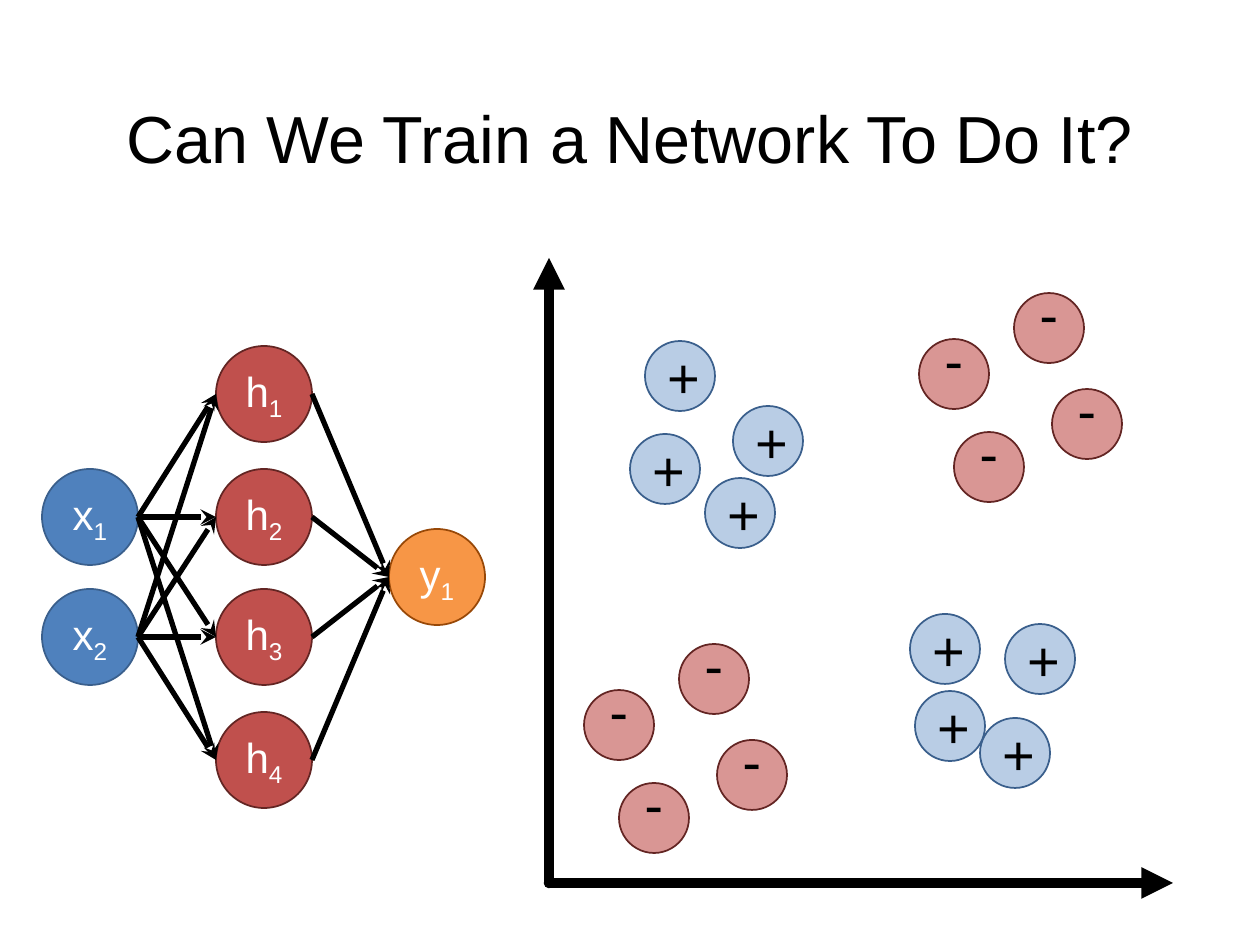
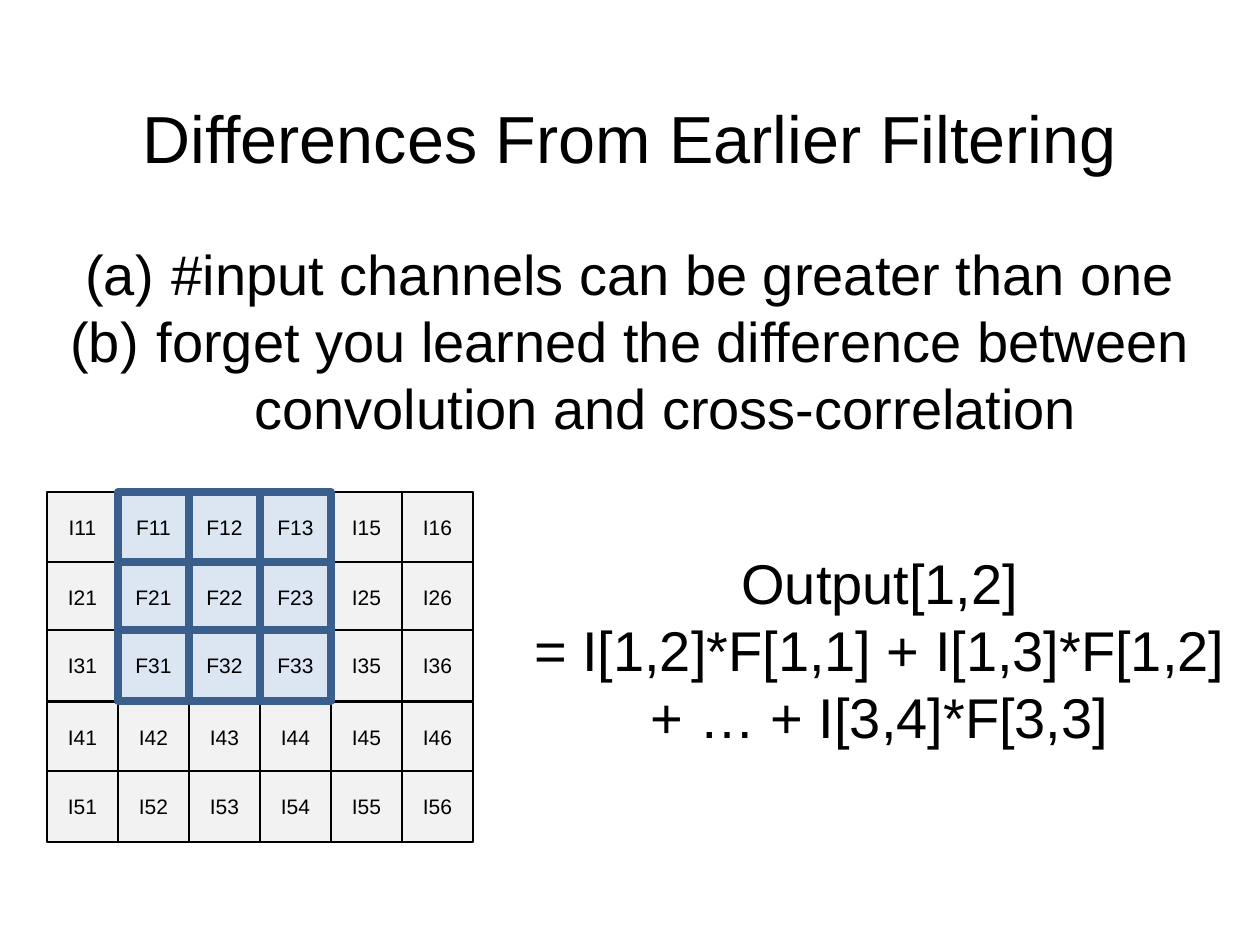
from pptx import Presentation
from pptx.dml.color import RGBColor
from pptx.enum.shapes import MSO_CONNECTOR, MSO_SHAPE
from pptx.enum.text import MSO_ANCHOR, PP_ALIGN
from pptx.oxml.ns import qn
from pptx.util import Emu, Pt
from lxml import etree

PX = 914400 / 126
OVAL, RECTANGLE = MSO_SHAPE.OVAL, MSO_SHAPE.RECTANGLE
STRAIGHT = MSO_CONNECTOR.STRAIGHT
CENTER = PP_ALIGN.CENTER
MIDDLE, TOP = MSO_ANCHOR.MIDDLE, MSO_ANCHOR.TOP
color = RGBColor.from_string

FONT = "Arial"
BLACK, WHITE = "000000", "FFFFFF"
BLUE, RED, ORANGE = "4F81BD", "C0504D", "F79646"
PALE_BLUE, PALE_RED = "B9CDE5", "D99694"
CELL_GRAY, FILTER_BLUE = "F2F2F2", "DCE6F2"
BLUE_EDGE, RED_EDGE, ORANGE_EDGE = "3A5F8C", "632523", "984807"
TITLE_BOX = (87, 50, 1086, 183)
TITLE_STYLE = dict(size=38, line_spacing=0.9)


def add_text(slide, text, box, kind=None, fill=None, edge=None, edge_width=1,
             size=32, font_color=BLACK, subscript="", anchor=MIDDLE,
             line_spacing=None, numbered=False):
    """Add a text box, or a filled shape when kind is given."""
    place = [Emu(round(value * PX)) for value in box]
    if kind is None:
        shape = slide.shapes.add_textbox(*place)
    else:
        shape = slide.shapes.add_shape(kind, *place)
        shape.shadow.inherit = False
        shape.fill.solid()
        shape.fill.fore_color.rgb = color(fill)
        shape.line.color.rgb = color(edge)
        shape.line.width = Pt(edge_width)
    frame = shape.text_frame
    frame.word_wrap = True
    frame.vertical_anchor = anchor
    frame.text = text
    if subscript:
        run = frame.paragraphs[0].add_run()
        run.text = subscript
        run._r.get_or_add_rPr().set("baseline", "-25000")
    for paragraph in frame.paragraphs:
        paragraph.alignment = CENTER
        if line_spacing:
            paragraph.line_spacing = line_spacing
        if numbered:
            properties = paragraph._p.get_or_add_pPr()
            properties.set("marL", "514350")
            properties.set("indent", "-514350")
            number = etree.SubElement(properties, qn("a:buAutoNum"))
            number.set("type", "alphaLcParenBoth")
        for run in paragraph.runs:
            run.font.name = FONT
            run.font.size = Pt(size)
            run.font.color.rgb = color(font_color)
    return shape


def add_arrow(slide, start, end, width, head, cap="flat"):
    points = [Emu(round(value * PX)) for value in (*start, *end)]
    arrow = slide.shapes.add_connector(STRAIGHT, *points)
    arrow.line.color.rgb = color(BLACK)
    arrow.line.width = Pt(width)
    line = arrow.line._get_or_add_ln()
    line.set("cap", cap)
    etree.SubElement(line, qn("a:tailEnd")).set("type", head)
    etree.SubElement(arrow._element.spPr, qn("a:effectLst"))


presentation = Presentation()
presentation.slide_width = Emu(round(1260 * PX))
presentation.slide_height = Emu(round(945 * PX))
blank = presentation.slide_layouts[6]

# Slide 1: network and the points it should separate
slide = presentation.slides.add_slide(blank)
add_text(slide, "Can We Train a Network To Do It?", TITLE_BOX, **TITLE_STYLE)

# Network nodes, layer by layer
NODE = 96
layers = [
    ("x", 42, (469, 589), BLUE, BLUE_EDGE),
    ("h", 216, (346, 469, 589, 712), RED, RED_EDGE),
    ("y", 389, (529,), ORANGE, ORANGE_EDGE),
]
for letter, left, tops, fill, edge in layers:
    for number, top in enumerate(tops, 1):
        add_text(slide, letter, (left, top, NODE, NODE), kind=OVAL, fill=fill,
                 edge=edge, size=24, font_color=WHITE, subscript=str(number))

# Every node feeds every node of the next layer
for (_, left, tops, *_), (_, next_left, next_tops, *_) in zip(layers, layers[1:]):
    for top in tops:
        for next_top in next_tops:
            add_arrow(slide, (left + NODE, top + NODE // 2),
                      (next_left, next_top + NODE // 2), 3, "stealth")

# Axes
origin = (549, 883)
for axis_end in [(549, 258), (1173, 883)]:
    add_arrow(slide, origin, axis_end, 6, "triangle", cap="rnd")

# Positive and negative points
POINT = 70
positives = [(645, 341), (630, 434), (733, 406), (705, 478),
             (910, 614), (915, 691), (1005, 624), (980, 718)]
upper_negatives = [(954, 432), (919, 339), (1052, 389), (1014, 293)]
lower_negatives = [(left - 335, top + 351) for left, top in upper_negatives]
for left, top in positives:
    add_text(slide, "+", (left, top, POINT, POINT), kind=OVAL,
             fill=PALE_BLUE, edge=BLUE_EDGE)
for left, top in upper_negatives + lower_negatives:
    point = add_text(slide, "-", (left, top, POINT, POINT), kind=OVAL,
                     fill=PALE_RED, edge=RED_EDGE)
    point._element.spPr.get_or_add_xfrm().set("flipV", "1")

# Slide 2: filter laid over an image
slide = presentation.slides.add_slide(blank)
add_text(slide, "Differences From Earlier Filtering", TITLE_BOX, **TITLE_STYLE)

# Image cells, then the 3 by 3 filter on top, one column in
CELL, GRID_LEFT = 71, 47
row_tops = (492, 562, 630, 702, 771)
FILTER_SIZE, FILTER_COLUMN = 3, 1
for row, top in enumerate(row_tops):
    for column in range(6):
        if row < FILTER_SIZE and 0 <= column - FILTER_COLUMN < FILTER_SIZE:
            continue
        add_text(slide, f"I{row + 1}{column + 1}",
                 (GRID_LEFT + CELL * column, top, CELL, CELL),
                 kind=RECTANGLE, fill=CELL_GRAY, edge=BLACK, size=12)
for row, top in enumerate(row_tops[:FILTER_SIZE]):
    for column in range(FILTER_SIZE):
        add_text(slide, f"F{row + 1}{column + 1}",
                 (GRID_LEFT + CELL * (column + FILTER_COLUMN), top, CELL, CELL),
                 kind=RECTANGLE, fill=FILTER_BLUE, edge=BLUE_EDGE,
                 edge_width=4.5, size=12)

# Explanations
add_text(slide, " #input channels can be greater than one\n"
         " forget you learned the difference between convolution and cross-correlation",
         (39, 233, 1183, 217), anchor=TOP, numbered=True)
add_text(slide, "Output[1,2]\n= I[1,2]*F[1,1] + I[1,3]*F[1,2] + … + I[3,4]*F[3,3]",
         (512, 542, 736, 217), anchor=TOP)

presentation.save("out.pptx")
